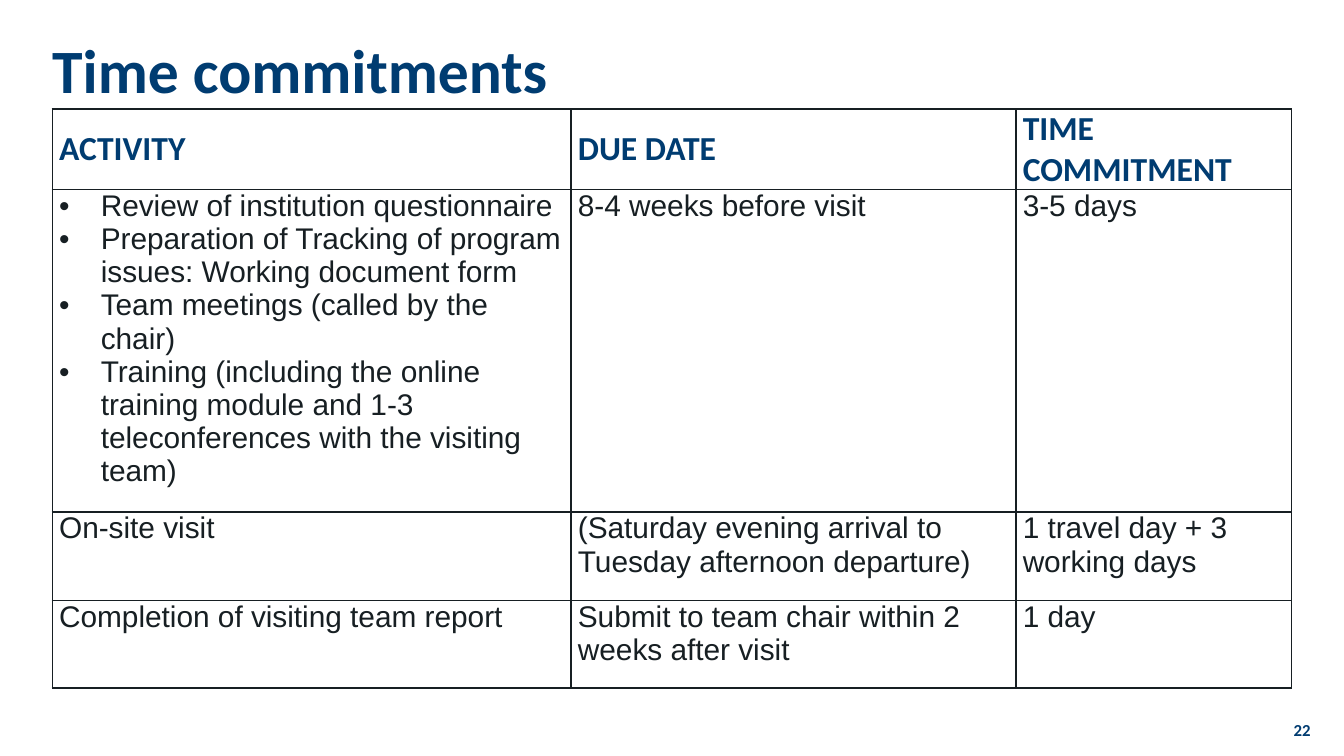
from pptx import Presentation
from pptx.dml.color import RGBColor
from pptx.enum.text import MSO_ANCHOR, PP_ALIGN
from pptx.oxml import parse_xml
from pptx.oxml.ns import nsdecls
from pptx.util import Inches, Pt

NAVY = RGBColor(0x00, 0x3C, 0x71)
INK = RGBColor(0x17, 0x1F, 0x23)

COL_WIDTHS = [3.86, 3.31, 2.05]
ROW_HEIGHTS = [0.43, 1.3, 0.66, 0.65]  # minimum heights: rows grow to fit
HEADER = ["ACTIVITY", "DUE DATE", "TIME COMMITMENT"]
PREPARATION = [
    "Review of institution questionnaire",
    "Preparation of Tracking of program issues: Working document form",
    "Team meetings (called by the chair)",
    "Training (including the online training module and 1-3 "
    "teleconferences with the visiting team)",
]
ROWS = [
    HEADER,
    [PREPARATION, "8-4 weeks before visit", "3-5 days"],
    ["On-site visit",
     "(Saturday evening arrival to Tuesday afternoon departure)",
     "1 travel day + 3 working days"],
    ["Completion of visiting team report",
     "Submit to team chair within 2 weeks after visit", "1 day"],
]


def add_run(p, text, size, name, color, bold=False):
    r = p.add_run()
    r.text = text
    r.font.size = Pt(size)
    r.font.name = name
    r.font.bold = bold
    r.font.color.rgb = color


def add_label(slide, box, text, size, align=PP_ALIGN.LEFT, spacing=1.0):
    """Add one line of bold navy text, centred vertically in the box."""
    tf = slide.shapes.add_textbox(*map(Inches, box)).text_frame
    tf.word_wrap = True
    tf.vertical_anchor = MSO_ANCHOR.MIDDLE
    tf.margin_top = tf.margin_bottom = 0
    p = tf.paragraphs[0]
    p.alignment = align
    p.line_spacing = spacing
    add_run(p, text, size, "Calibri", NAVY, bold=True)


def set_borders(cell):
    tcPr = cell._tc.get_or_add_tcPr()
    for i, side in enumerate(("lnL", "lnR", "lnT", "lnB")):
        tcPr.insert(i, parse_xml(
            f'<a:{side} {nsdecls("a")} w="{Pt(1)}"><a:solidFill>'
            f'<a:srgbClr val="{INK}"/></a:solidFill></a:{side}>'))


def add_bullet(p):
    pPr = p._p.get_or_add_pPr()
    pPr.set("marL", str(Inches(0.31)))
    pPr.set("indent", str(-Inches(0.31)))
    pPr.append(parse_xml(f'<a:buFont {nsdecls("a")} typeface="Arial"/>'))
    pPr.append(parse_xml(f'<a:buChar {nsdecls("a")} char="•"/>'))


def fill_cell(cell, content, is_header):
    """Write a string, or a list of strings as bullets, into the cell."""
    cell.margin_left = cell.margin_right = Inches(0.05)
    cell.margin_top = cell.margin_bottom = 0
    cell.vertical_anchor = MSO_ANCHOR.MIDDLE if is_header else MSO_ANCHOR.TOP
    cell.fill.background()
    set_borders(cell)
    bulleted = isinstance(content, list)
    tf = cell.text_frame
    for i, text in enumerate(content if bulleted else [content]):
        p = tf.add_paragraph() if i else tf.paragraphs[0]
        if bulleted:
            add_bullet(p)
        if is_header:
            add_run(p, text, 18, "Calibri", NAVY, bold=True)
        else:
            add_run(p, text, 16, "Arial", INK)


def add_commitment_table(slide, left, top, width, height):
    frame = slide.shapes.add_table(
        len(ROWS), len(COL_WIDTHS), Inches(left), Inches(top),
        Inches(width), Inches(height))
    table = frame.table
    table.horz_banding = False
    for col, col_width in zip(table.columns, COL_WIDTHS):
        col.width = Inches(col_width)
    for i, (row, row_height) in enumerate(zip(table.rows, ROW_HEIGHTS)):
        row.height = Inches(row_height)
        for cell, content in zip(row.cells, ROWS[i]):
            fill_cell(cell, content, is_header=i == 0)
    frame.width, frame.height = Inches(width), Inches(height)


def main():
    prs = Presentation()
    prs.slide_width = Inches(10)
    prs.slide_height = prs.slide_width * 9 // 16
    slide = prs.slides.add_slide(prs.slide_layouts[6])
    add_label(slide, (0.29, 0, 8.62, 1.09), "Time commitments", 33, spacing=0.9)
    add_commitment_table(slide, 0.39, 0.81, 9.21, 4.31)
    add_label(slide, (9.49, 5.35, 0.36, 0.16), "22", 9, PP_ALIGN.RIGHT)
    prs.save("out.pptx")


if __name__ == "__main__":
    main()
